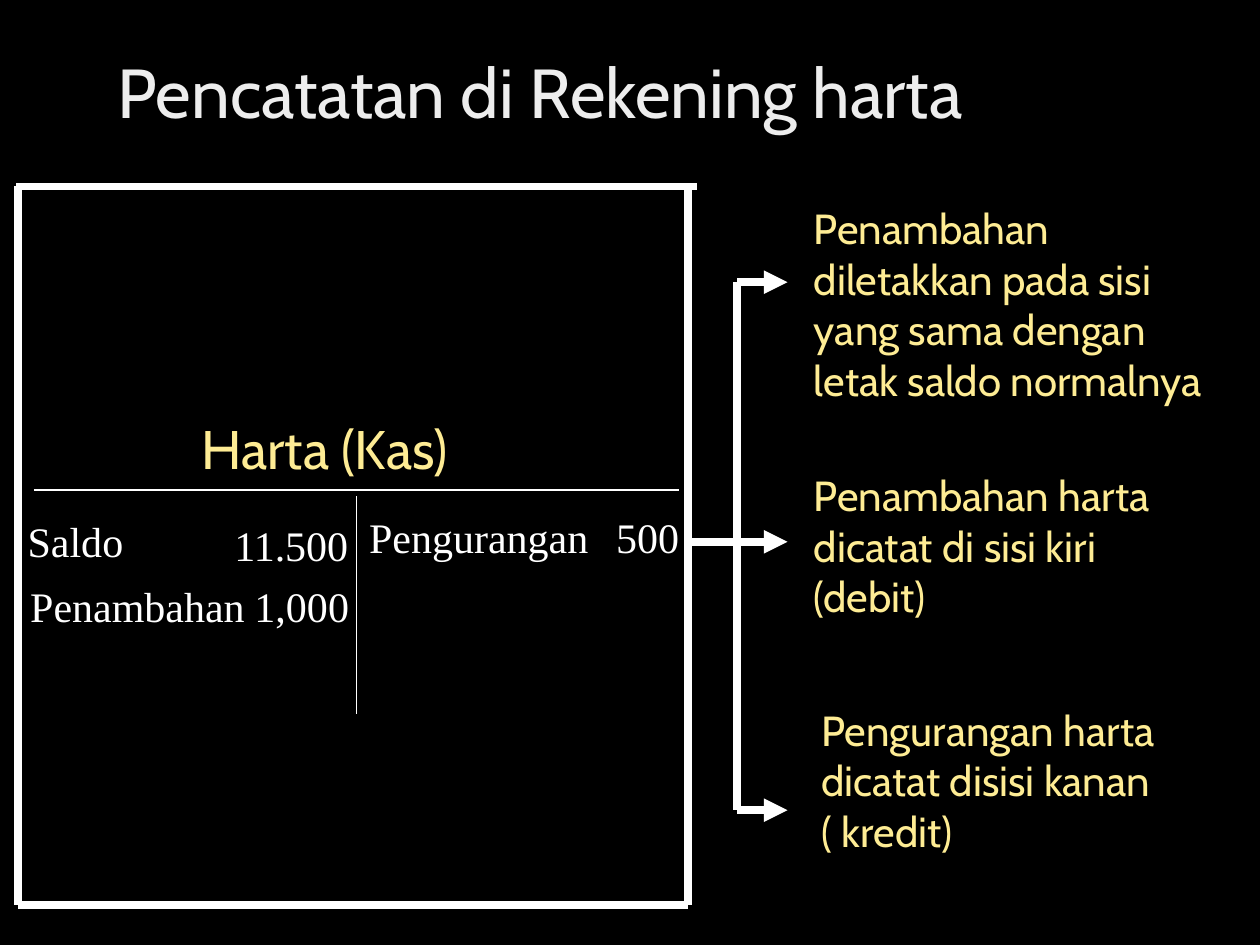
from dataclasses import dataclass

from lxml import etree
from pptx import Presentation
from pptx.dml.color import RGBColor
from pptx.enum import shapes, text
from pptx.oxml import ns
from pptx.util import Inches, Pt


@dataclass(frozen=True)
class Theme:
    background: RGBColor = RGBColor.from_string("000000")
    title: RGBColor = RGBColor.from_string("EDEDED")
    accent: RGBColor = RGBColor.from_string("FEEC94")
    white: RGBColor = RGBColor.from_string("FFFFFF")
    heading_font: str = "Cabin"
    entry_font: str = "Times New Roman"
    title_size: float = 39.6
    account_size: float = 31
    body_size: float = 24
    thin: float = 0.75
    thick: float = 4.5


theme = Theme()


def add_line(s, x1, y1, x2, y2, width, arrow=False):
    c = s.shapes.add_connector(shapes.MSO_CONNECTOR.STRAIGHT,
                               Inches(x1), Inches(y1), Inches(x2), Inches(y2))
    c.line.color.rgb = theme.white
    c.line.width = Pt(width)
    if arrow:
        etree.SubElement(c.line._get_or_add_ln(), ns.qn("a:tailEnd"), type="triangle")
    etree.SubElement(c._element.spPr, ns.qn("a:effectLst"))


def add_text(s, x, y, w, h, words, font, size, color, wrap=True):
    sp = s.shapes.add_textbox(Inches(x), Inches(y), Inches(w), Inches(h))
    tf = sp.text_frame
    tf.word_wrap = wrap
    tf.auto_size = text.MSO_AUTO_SIZE.NONE if wrap else text.MSO_AUTO_SIZE.SHAPE_TO_FIT_TEXT
    tf.vertical_anchor = text.MSO_ANCHOR.MIDDLE if wrap else text.MSO_ANCHOR.TOP
    tf.margin_left = tf.margin_right = Inches(0.08)
    tf.margin_top = tf.margin_bottom = Inches(0.04)
    p = tf.paragraphs[0]
    r = p.add_run()
    r.text = words
    r.font.name = font
    r.font.size = Pt(size)
    r.font.color.rgb = color
    return p


prs = Presentation()
prs.slide_width = Inches(10)
prs.slide_height = Inches(7.5)
s = prs.slides.add_slide(prs.slide_layouts[5])
s.background.fill.solid()
s.background.fill.fore_color.rgb = theme.background

sp = s.shapes.title
sp.left, sp.top, sp.width, sp.height = Inches(0.83), Inches(0.38), Inches(8.5), Inches(0.76)
tf = sp.text_frame
tf.vertical_anchor = text.MSO_ANCHOR.MIDDLE
tf.auto_size = text.MSO_AUTO_SIZE.NONE
p = tf.paragraphs[0]
p.alignment = text.PP_ALIGN.LEFT
p.line_spacing = 0.9
r = p.add_run()
r.text = "Pencatatan di Rekening harta"
r.font.name = theme.heading_font
r.font.size = Pt(theme.title_size)
r.font.color.rgb = theme.title

add_line(s, 0.27, 3.89, 5.39, 3.89, theme.thin)
add_line(s, 2.83, 3.94, 2.83, 5.67, theme.thin)
p = add_text(s, 0.87, 3.34, 3.41, 0.43, "Harta (Kas)",
             theme.heading_font, theme.account_size, theme.accent)
p.alignment = text.PP_ALIGN.CENTER

entries = [
    (0.14, 4.05, 0.94, "Saldo"),
    (1.78, 4.08, 1.08, "11.500"),
    (0.16, 4.57, 1.89, "Penambahan"),
    (1.94, 4.57, 0.93, "1,000"),
    (2.85, 4.02, 1.93, "Pengurangan"),
    (4.81, 4.02, 0.68, "500"),
]
for x, y, w, words in entries:
    add_text(s, x, y, w, 0.49, words, theme.entry_font, theme.body_size, theme.white, wrap=False)

left, right, top, bottom = 0.14, 5.46, 1.48, 7.18
for x in (left, right):
    add_line(s, x, top, x, bottom, theme.thick)
add_line(s, 0.13, top, 5.53, top, theme.thick)
add_line(s, left, bottom, right, bottom, theme.thick)

trunk, tip = 5.85, 6.25
arrow_rows = (2.24, 4.3, 6.43)
add_line(s, right, arrow_rows[1], trunk, arrow_rows[1], theme.thick)
add_line(s, trunk, arrow_rows[0], trunk, arrow_rows[-1], theme.thick)
for y in arrow_rows:
    add_line(s, trunk, y, tip, y, theme.thick, arrow=True)

rules = [
    (6.38, 1.55, 3.28, 1.72, "Penambahan diletakkan pada sisi yang sama dengan letak saldo normalnya"),
    (6.38, 3.68, 3.28, 1.3, "Penambahan harta dicatat di sisi kiri (debit)"),
    (6.44, 5.54, 3.56, 1.3, "Pengurangan harta dicatat disisi kanan ( kredit)"),
]
for x, y, w, h, words in rules:
    add_text(s, x, y, w, h, words, theme.heading_font, theme.body_size, theme.accent)

prs.save("out.pptx")
